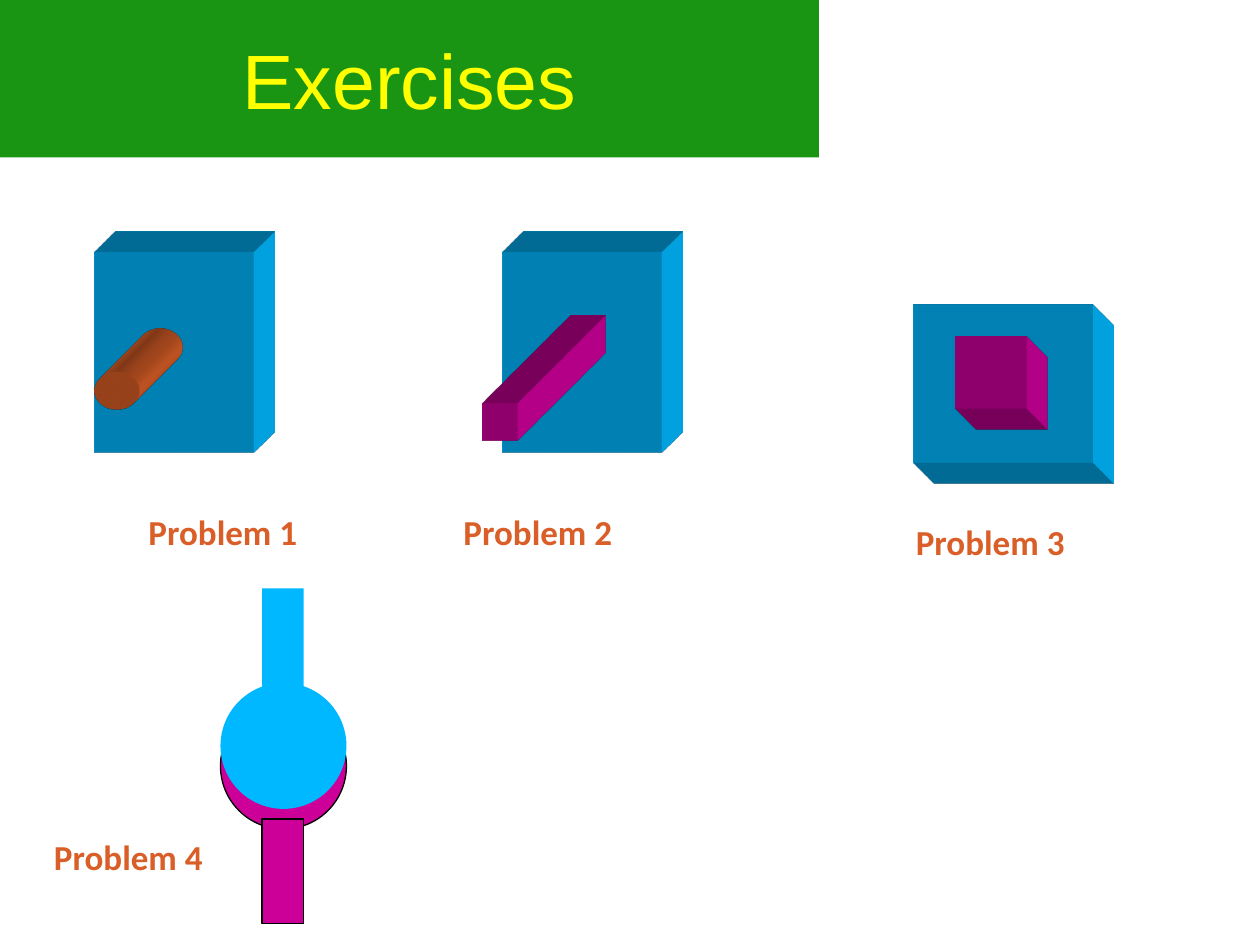
"""Build the Exercises slide with four numbered solid-shape problems."""
from lxml import etree
from pptx import Presentation
from pptx.dml.color import RGBColor
from pptx.enum.shapes import MSO_SHAPE as Shape
from pptx.enum.text import MSO_ANCHOR as Anchor, MSO_AUTO_SIZE as AutoSize, PP_ALIGN as Align
from pptx.oxml import parse_xml
from pptx.util import Inches, Pt

COLORS = {
    "banner": "199513",
    "title": "FFFF00",
    "label": "D95E27",
    "blue": "00B8FF",
    "magenta": "CC0099",
    "outline": "000000",
}
DRAWING = "http://schemas.openxmlformats.org/drawingml/2006/main"
SHALLOW, MEDIUM, DEEP = 0.47, 0.97, 1.97


def color(name):
    return RGBColor.from_string(COLORS[name])


def add_run(para, text, font, size, fill, bold=False):
    span = para.add_run()
    span.text = text
    span.font.name = font
    span.font.size = Pt(size)
    span.font.bold = bold
    span.font.color.rgb = color(fill)


def add_title(page, text):
    box = page.shapes.title
    box.left, box.top = Inches(0), Inches(0)
    box.width, box.height = Inches(6.5), Inches(1.25)
    box.fill.solid()
    box.fill.fore_color.rgb = color("banner")
    box.text_frame.vertical_anchor = Anchor.MIDDLE
    para = box.text_frame.paragraphs[0]
    para.alignment = Align.CENTER
    add_run(para, text, "Arial", 44, "title")


def add_label(page, text, left, top):
    box = page.shapes.add_textbox(Inches(left), Inches(top), Inches(1.58), Inches(0.43))
    box.text_frame.word_wrap = True
    box.text_frame.auto_size = AutoSize.SHAPE_TO_FIT_TEXT
    add_run(box.text_frame.paragraphs[0], text, "Calibri", 20, "label", bold=True)


def add_flat(page, kind, area, fill, outlined=False):
    shape = page.shapes.add_shape(kind, *map(Inches, area))
    shape.shadow.inherit = False
    shape.fill.solid()
    shape.fill.fore_color.rgb = color(fill)
    if outlined:
        shape.line.color.rgb = color("outline")
        shape.line.width = Pt(0.75)
    else:
        shape.line.fill.background()
    return shape


def add_solid(page, kind, area, fill, depth, side="TopRight"):
    shape = add_flat(page, kind, area, fill)
    scene = parse_xml(
        f'<a:scene3d xmlns:a="{DRAWING}"><a:camera prst="legacyOblique{side}"/>'
        '<a:lightRig rig="legacyFlat3" dir="b"/></a:scene3d>'
    )
    body = parse_xml(
        f'<a:sp3d xmlns:a="{DRAWING}" extrusionH="{Inches(depth)}" prstMaterial="legacyMatte"/>'
    )
    for end in ("bevelT", "bevelB"):
        etree.SubElement(body, f"{{{DRAWING}}}{end}", w="13500", h="13500", prst="angle")
    tint = etree.SubElement(body, f"{{{DRAWING}}}extrusionClr")
    etree.SubElement(tint, f"{{{DRAWING}}}srgbClr", val=COLORS[fill])
    shape._element.spPr.extend([scene, body])


def main():
    deck = Presentation()
    deck.slide_width, deck.slide_height = Inches(10), Inches(7.5)
    page = deck.slides.add_slide(deck.slide_layouts[5])
    add_title(page, "Exercises")

    add_solid(page, Shape.RECTANGLE, (0.75, 2, 1.26, 1.59), "blue", SHALLOW)
    add_solid(page, Shape.OVAL, (0.75, 2.95, 0.36, 0.3), "label", MEDIUM)
    add_solid(page, Shape.RECTANGLE, (3.99, 2, 1.26, 1.59), "blue", SHALLOW)
    add_solid(page, Shape.RECTANGLE, (3.83, 3.2, 0.28, 0.3), "magenta", DEEP)
    add_solid(page, Shape.RECTANGLE, (7.25, 2.42, 1.42, 1.25), "blue", SHALLOW, "BottomRight")
    add_solid(page, Shape.RECTANGLE, (7.58, 2.67, 0.57, 0.57), "magenta", SHALLOW, "BottomRight")

    add_flat(page, Shape.OVAL, (1.75, 5.58, 1, 1), "magenta", outlined=True)
    add_flat(page, Shape.OVAL, (1.75, 5.42, 1, 1), "blue")
    add_flat(page, Shape.RECTANGLE, (2.08, 4.67, 0.33, 0.83), "blue")
    add_flat(page, Shape.RECTANGLE, (2.08, 6.5, 0.33, 0.83), "magenta", outlined=True)

    places = [(1.08, 4), (3.58, 4), (7.17, 4.08), (0.33, 6.58)]
    for number, (left, top) in enumerate(places, 1):
        add_label(page, f"Problem {number}", left, top)

    deck.save("out.pptx")


if __name__ == "__main__":
    main()
